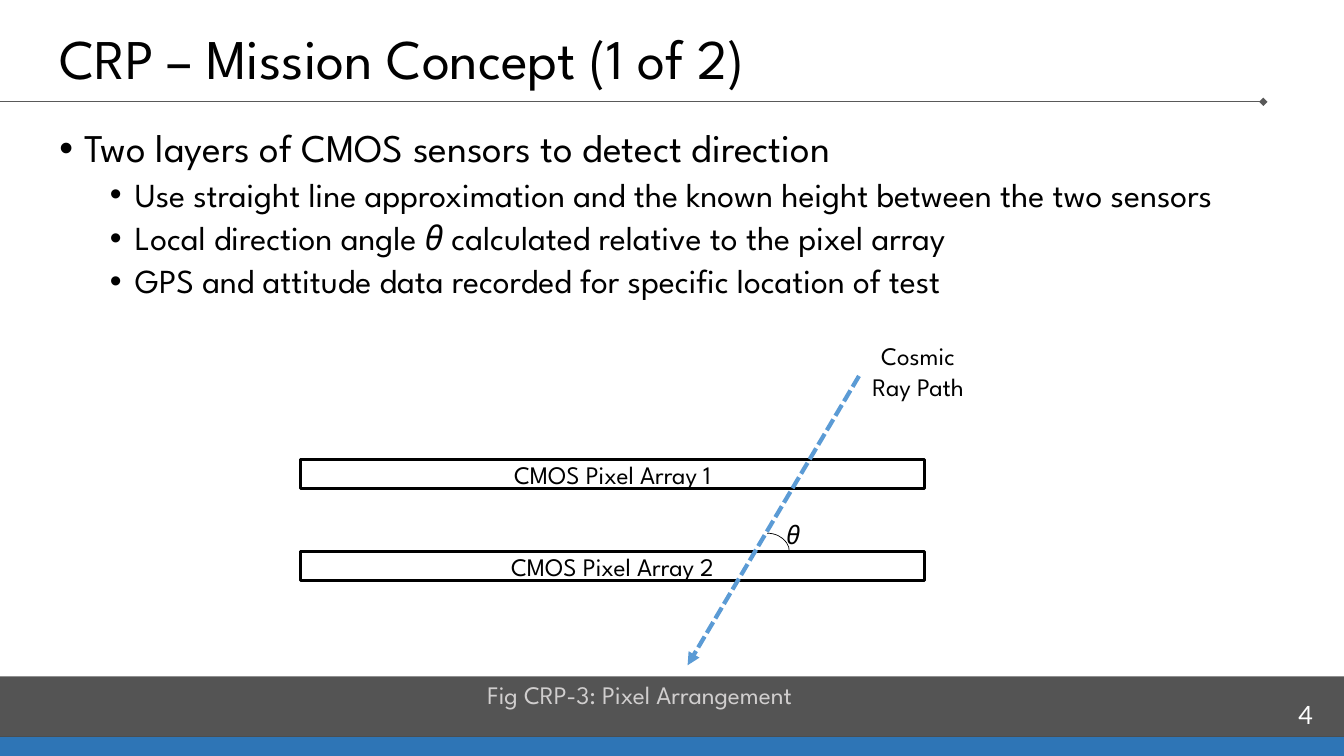
from dataclasses import dataclass

from lxml import etree
from pptx import Presentation
from pptx.dml.color import RGBColor
from pptx.enum.dml import MSO_LINE
from pptx.enum.shapes import MSO_CONNECTOR, MSO_SHAPE
from pptx.enum.text import MSO_ANCHOR, PP_ALIGN
from pptx.oxml.ns import qn
from pptx.util import Inches, Pt

RECT, ARC = MSO_SHAPE.RECTANGLE, MSO_SHAPE.ARC
STRAIGHT = MSO_CONNECTOR.STRAIGHT
DASH = MSO_LINE.SQUARE_DOT
LEFT, CENTER = PP_ALIGN.LEFT, PP_ALIGN.CENTER
TOP, MIDDLE, BOTTOM = MSO_ANCHOR.TOP, MSO_ANCHOR.MIDDLE, MSO_ANCHOR.BOTTOM


@dataclass(frozen=True)
class Theme:
    font: str = "League Spartan"
    digit: str = "Lato"
    ink: str = "000000"
    paper: str = "FFFFFF"
    rule: str = "595959"
    band: str = "2E75B6"
    ray: str = "5B9BD5"
    note: str = "D0CECE"
    title: int = 40
    lead: int = 28
    point: int = 24
    label: int = 18


class Deck:
    def __init__(self, theme):
        self.theme = theme
        self.show = Presentation()
        self.show.slide_width = Inches(13.33)
        self.show.slide_height = Inches(7.5)
        self.slide = self.show.slides.add_slide(self.show.slide_layouts[6])

    def add_runs(self, para, runs, size, color=None, font=None):
        """Add (text, italic) runs to a paragraph."""
        for text, italic in runs:
            run = para.add_run()
            run.text = text
            run.font.size = Pt(size)
            run.font.name = font or self.theme.font
            run.font.italic = italic
            run.font.color.rgb = RGBColor.from_string(color or self.theme.ink)

    def frame(self, box, anchor):
        frame = box.text_frame
        frame.word_wrap = True
        frame.vertical_anchor = anchor
        return frame

    def text(self, at, text, size, color=None, font=None, align=CENTER,
             anchor=TOP, italic=False, lead=None):
        box = self.slide.shapes.add_textbox(*map(Inches, at))
        para = self.frame(box, anchor).paragraphs[0]
        para.alignment = align
        para.line_spacing = lead
        self.add_runs(para, [(text, italic)], size, color, font)

    def bullets(self, at, items):
        """Add (level, runs) items as a bulleted list."""
        box = self.slide.shapes.add_textbox(*map(Inches, at))
        frame = self.frame(box, TOP)
        for i, (level, runs) in enumerate(items):
            para = frame.add_paragraph() if i else frame.paragraphs[0]
            para.level = level
            para.line_spacing = 0.9
            para.space_before = Pt(5 if i else 0)
            props = para._p.get_or_add_pPr()
            props.set("marL", str(Inches(0.25 + 0.5 * level)))
            props.set("indent", str(Inches(-0.25)))
            etree.SubElement(props, qn("a:buFont")).set("typeface", "Arial")
            etree.SubElement(props, qn("a:buChar")).set("char", "•")
            size = self.theme.point if level else self.theme.lead
            self.add_runs(para, runs, size)

    def shape(self, kind, at, fill=None, alpha=None, line=None, text=None):
        item = self.slide.shapes.add_shape(kind, *map(Inches, at))
        item.shadow.inherit = False
        if fill:
            item.fill.solid()
            item.fill.fore_color.rgb = RGBColor.from_string(fill)
        else:
            item.fill.background()
        if alpha:
            tint = item._element.spPr.find(".//" + qn("a:srgbClr"))
            etree.SubElement(tint, qn("a:alpha")).set("val", str(alpha * 1000))
        if line:
            item.line.color.rgb = RGBColor.from_string(self.theme.ink)
            item.line.width = Pt(line)
        else:
            item.line.fill.background()
        if text:
            para = self.frame(item, MIDDLE).paragraphs[0]
            para.alignment = CENTER
            self.add_runs(para, [(text, False)], self.theme.label)

    def line(self, start, end, color, width, tail, dash=None):
        item = self.slide.shapes.add_connector(
            STRAIGHT, *map(Inches, start + end))
        item.line.color.rgb = RGBColor.from_string(color)
        item.line.width = Pt(width)
        if dash:
            item.line.dash_style = dash
        props = item._element.spPr
        stroke = props.find(qn("a:ln"))
        etree.SubElement(stroke, qn("a:tailEnd")).set("type", tail)
        etree.SubElement(props, qn("a:effectLst"))


def main():
    theme = Theme()
    deck = Deck(theme)

    # Title rule and footer bands
    deck.line((0, 1.01), (12.53, 1.01), theme.rule, 1, "diamond")
    deck.shape(RECT, (0, 7.31, 13.33, 0.2), fill=theme.band)
    deck.shape(RECT, (0, 6.71, 13.33, 0.6), fill=theme.ink, alpha=67)

    # Title and page number
    deck.text((0.49, 0.13, 11.99, 0.83), "CRP – Mission Concept (1 of 2)",
              theme.title, align=LEFT, anchor=BOTTOM, lead=0.9)
    deck.text((12.56, 6.89, 0.78, 0.4), "4", theme.label, theme.paper,
              theme.digit, anchor=MIDDLE)

    # Main points
    deck.bullets((0.49, 1.23, 12.39, 5.37), [
        (0, [("Two layers of CMOS sensors to detect direction", False)]),
        (1, [("Use straight line approximation and the known height "
              "between the two sensors", False)]),
        (1, [("Local direction angle ", False), ("θ", True),
             (" calculated relative to the pixel array", False)]),
        (1, [("GPS and attitude data recorded for specific location of test",
              False)]),
    ])

    # Caption
    deck.text((4.2, 6.69, 4.29, 0.4), "Fig CRP-3: Pixel Arrangement",
              theme.label, theme.note)

    # Pixel arrays
    for i in range(2):
        deck.shape(RECT, (2.98, 4.56 + 0.91 * i, 6.19, 0.29), line=2.25,
                   text=f"CMOS Pixel Array {i + 1}")

    # Ray and its angle
    deck.line((8.52, 3.73), (6.82, 6.6), theme.ray, 3, "triangle", DASH)
    deck.shape(ARC, (7.39, 5.29, 0.44, 0.37), line=0.5)
    deck.text((7.7, 5.1, 0.28, 0.29), "θ", theme.label, align=LEFT,
              italic=True)
    deck.text((8.52, 3.33, 1.17, 0.51), "Cosmic Ray Path", theme.label)

    deck.show.save("out.pptx")


if __name__ == "__main__":
    main()
